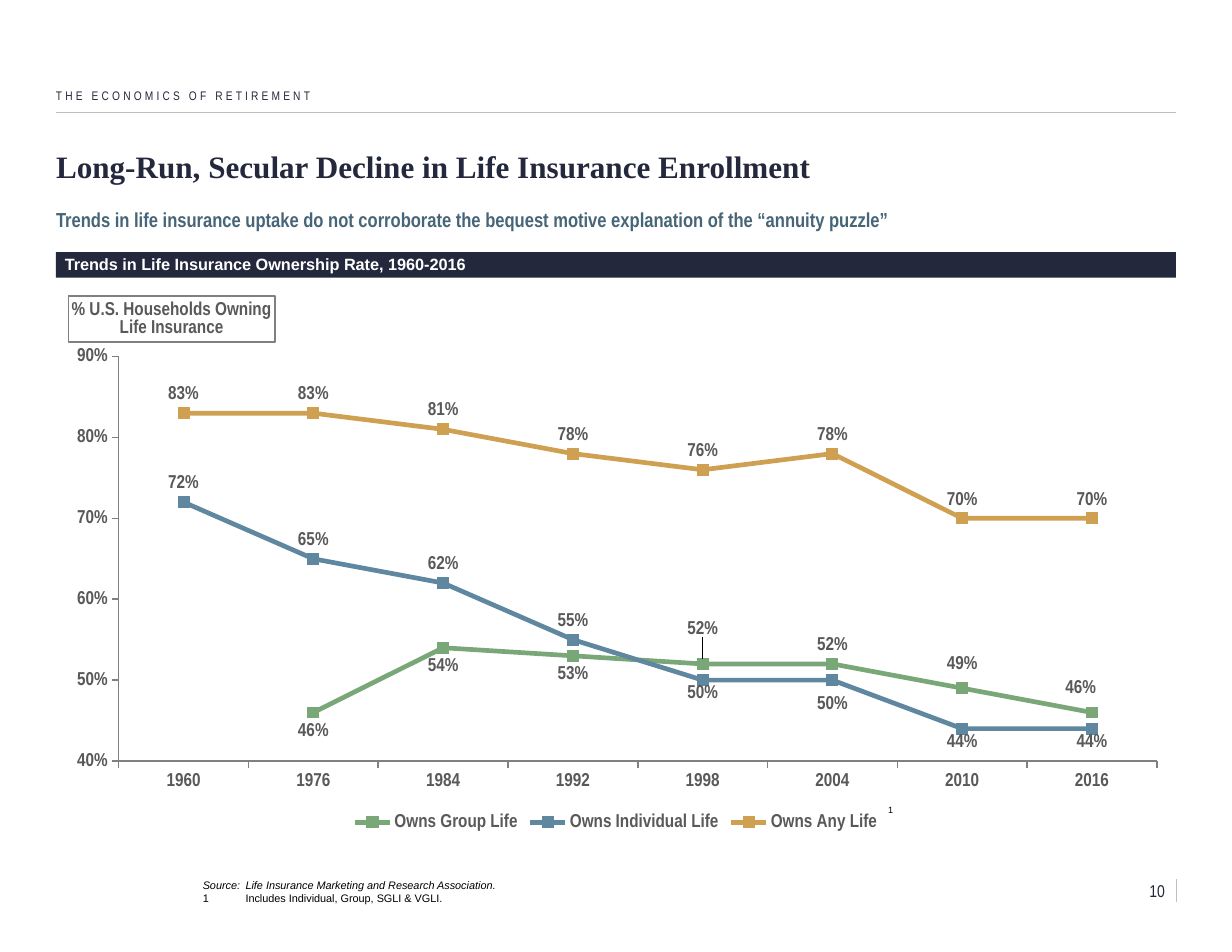
from lxml.etree import SubElement
from pptx import Presentation
from pptx.chart.data import CategoryChartData
from pptx.dml.color import RGBColor
from pptx.enum.chart import XL_CHART_TYPE, XL_LABEL_POSITION, XL_LEGEND_POSITION, XL_MARKER_STYLE, XL_TICK_MARK
from pptx.enum.shapes import MSO_CONNECTOR, MSO_SHAPE
from pptx.enum.text import MSO_ANCHOR, MSO_AUTO_SIZE, PP_ALIGN
from pptx.oxml.ns import qn
from pptx.util import Cm, Pt

NAVY = RGBColor(0x23, 0x28, 0x3C)
STEEL = RGBColor(0x47, 0x65, 0x78)
WHITE = RGBColor(0xFF, 0xFF, 0xFF)
BLACK = RGBColor(0, 0, 0)
PALE = RGBColor(0xBF, 0xBF, 0xBF)
GRAY = RGBColor(0x80, 0x80, 0x80)
DARK = RGBColor(0x59, 0x59, 0x59)
GREEN = RGBColor(0x7A, 0xA7, 0x78)
BLUE = RGBColor(0x5F, 0x87, 0xA0)
GOLD = RGBColor(0xCF, 0xA0, 0x52)

ABOVE, BELOW = XL_LABEL_POSITION.ABOVE, XL_LABEL_POSITION.BELOW
YEARS = ["1960", "1976", "1984", "1992", "1998", "2004", "2010", "2016"]
SERIES = [
    ("Owns Group Life", GREEN, BELOW, [None, 0.46, 0.54, 0.53, 0.52, 0.52, 0.49, 0.46]),
    ("Owns Individual Life", BLUE, ABOVE, [0.72, 0.65, 0.62, 0.55, 0.5, 0.5, 0.44, 0.44]),
    ("Owns Any Life", GOLD, ABOVE, [0.83, 0.83, 0.81, 0.78, 0.76, 0.78, 0.7, 0.7]),
]
SHIFTS = {
    "Owns Group Life": (ABOVE, {4: (0, -0.03), 5: (0, 0), 6: (0, -0.01), 7: (-0.01, -0.01)}),
    "Owns Individual Life": (BELOW, {4: (0, -0.01), 5: (0, 0.01), 6: (0, -0.01), 7: (0, -0.01)}),
}


def apply(item, values):
    for key, value in values.items():
        if key == "color":
            item.color.rgb = value
        else:
            setattr(item, key, value)


def style(name, size, color, **more):
    return {"name": name, "size": Pt(size), "color": color, **more}


def place(node, index, **values):
    for old in node.findall(qn("c:layout")):
        node.remove(old)
    layout = node.makeelement(qn("c:layout"))
    node.insert(index, layout)
    manual = SubElement(layout, qn("c:manualLayout"))
    for key, value in values.items():
        SubElement(manual, qn("c:" + key)).set("val", str(value))


class Page:
    narrow, sans, serif = "Arial Narrow", "Arial", "Times New Roman"

    def __init__(self, slide):
        self.slide = slide
        self.shapes = slide.shapes

    def rule(self, x1, y1, x2, y2):
        line = self.shapes.add_connector(MSO_CONNECTOR.STRAIGHT, Cm(x1), Cm(y1), Cm(x2), Cm(y2))
        apply(line.line, {"color": PALE, "width": Pt(0.5)})
        SubElement(line._element.spPr, qn("a:effectLst"))

    def letter(self, shape, lines, font, pad=(0, 0, 0, 0), anchor=MSO_ANCHOR.TOP,
               wrap=True, align=PP_ALIGN.LEFT, space=1.0):
        sides = ("margin_left", "margin_top", "margin_right", "margin_bottom")
        frame = shape.text_frame
        apply(frame, {"word_wrap": wrap, "auto_size": MSO_AUTO_SIZE.NONE, "vertical_anchor": anchor,
                      **dict(zip(sides, map(Cm, pad)))})
        for index, line in enumerate(lines):
            para = frame.add_paragraph() if index else frame.paragraphs[0]
            apply(para, {"alignment": align, "line_spacing": space, "space_before": Pt(0)})
            for text, more in line:
                run = para.add_run()
                run.text = text
                apply(run.font, {**font, **more})
        return frame

    def holder(self, index, box, text, font, **more):
        shape = self.slide.placeholders[index]
        apply(shape, dict(zip(("left", "top", "width", "height"), map(Cm, box))))
        return self.letter(shape, [[(text, {})]], font, **more)

    def label(self, box, lines, font, **more):
        shape = self.shapes.add_textbox(*map(Cm, box))
        return self.letter(shape, lines, font, **more)

    def banner(self, box, text, font):
        shape = self.shapes.add_shape(MSO_SHAPE.RECTANGLE, *map(Cm, box))
        shape.shadow.inherit = False
        shape.fill.solid()
        shape.fill.fore_color.rgb = NAVY
        shape.line.fill.background()
        self.letter(shape, [[(text, {})]], font, pad=(0.2, 0.1, 0.2, 0.1), anchor=MSO_ANCHOR.BOTTOM)

    def chart(self, box):
        data = CategoryChartData(number_format="0%")
        data.categories = YEARS
        for name, _, _, values in SERIES:
            data.add_series(name, values)
        chart = self.shapes.add_chart(XL_CHART_TYPE.LINE_MARKERS, *map(Cm, box), data).chart
        font = style(self.narrow, 12, DARK, bold=True)
        chart.has_title = False
        apply(chart.font, font)
        chart.has_legend = True
        apply(chart.legend, {"position": XL_LEGEND_POSITION.BOTTOM, "include_in_layout": False})
        area = chart._chartSpace.chart.plotArea
        place(area, 0, layoutTarget="inner", xMode="edge", yMode="edge", x=0.056, y=0.131, w=0.927, h=0.734)
        chart.plots[0].vary_by_categories = False
        for series, (_, color, spot, _) in zip(chart.plots[0].series, SERIES):
            self.series(series, color, spot)
        for axis in (chart.category_axis, chart.value_axis):
            apply(axis, {"has_major_gridlines": False, "major_tick_mark": XL_TICK_MARK.OUTSIDE,
                         "minor_tick_mark": XL_TICK_MARK.NONE})
            apply(axis.format.line, {"color": GRAY, "width": Pt(1)})
        axis = chart.value_axis
        apply(axis, {"minimum_scale": 0.4, "maximum_scale": 0.9, "major_unit": 0.1})
        apply(axis.tick_labels, {"number_format": "0%", "number_format_is_linked": False})
        self.heading(axis.axis_title, font)

    def series(self, series, color, spot):
        series.smooth = False
        apply(series.format.line, {"color": color, "width": Pt(3)})
        apply(series.marker, {"style": XL_MARKER_STYLE.SQUARE, "size": 7})
        series.marker.format.fill.solid()
        series.marker.format.fill.fore_color.rgb = color
        series.marker.format.line.color.rgb = color
        apply(series.data_labels, {"show_value": True, "position": spot})
        side, shifts = SHIFTS.get(series.name, (spot, {}))
        for index, (x, y) in shifts.items():
            label = series.points[index].data_label
            label.position = side
            if x or y:
                node = series.data_labels._element.xpath(f"c:dLbl[c:idx/@val={index}]")[0]
                place(node, 1, x=x, y=y)

    def heading(self, title, font):
        frame = title.text_frame
        for index, text in enumerate(("% U.S. Households Owning", "Life Insurance")):
            para = frame.add_paragraph() if index else frame.paragraphs[0]
            apply(para, {"alignment": PP_ALIGN.CENTER, "line_spacing": 0.9})
            run = para.add_run()
            run.text = text
            apply(run.font, font)
        apply(title.format.line, {"color": GRAY, "width": Pt(1)})
        for key, value in {"rot": "0", "vert": "horz"}.items():
            title._element.xpath(".//a:bodyPr")[0].set(key, value)
        place(title._element, 1, xMode="edge", yMode="edge", x=0.011, y=0.021)


def main():
    deck = Presentation()
    apply(deck, {"slide_width": Cm(27.94), "slide_height": Cm(21.59)})
    page = Page(deck.slides.add_slide(deck.slide_layouts[1]))
    left, wide = 1.27, 25.4
    right = left + wide

    page.rule(right, 19.94, right, 20.45)
    page.rule(left, 2.54, right, 2.54)
    page.holder(0, (left, 3.43, wide, 1.02), "Long-Run, Secular Decline in Life Insurance Enrollment",
                style(page.serif, 20, NAVY, bold=True), pad=(0, 0, 0, 0.25), space=0.9)
    frame = page.label((left, 1.91, 21.34, 0.51), [[("THE ECONOMICS OF RETIREMENT", {})]],
                       style(page.narrow, 8, NAVY), pad=(0, 0, 9.14, 0.08), anchor=MSO_ANCHOR.BOTTOM)
    frame.paragraphs[0].runs[0].font._element.set("spc", "200")
    page.chart((left, 6.45, wide, 12.5))
    page.banner((left, 5.72, wide, 0.58), "Trends in Life Insurance Ownership Rate, 1960-2016",
                style(page.sans, 10.5, WHITE, bold=True))

    notes = [[("Source: \tLife Insurance Marketing and Research Association", {"italic": True}), (".", {})],
             [("1\tIncludes Individual, Group, SGLI & VGLI.", {})]]
    frame = page.label((4.6, 20.09, 20.42, 0.43), notes, style(page.sans, 7, BLACK), anchor=MSO_ANCHOR.BOTTOM)
    hang = Cm(0.97)
    for para in frame.paragraphs:
        props = para._p.get_or_add_pPr()
        for key, value in {"marL": hang, "indent": -hang}.items():
            props.set(key, str(int(value)))
        tabs = SubElement(props, qn("a:tabLst"))
        SubElement(tabs, qn("a:tab"), pos=str(int(hang)), algn="l")

    frame = page.label((19.89, 18.08, 0.64, 0.53), [[("1", {})]], style(page.sans, 10, BLACK),
                       pad=(0.25, 0.13, 0.25, 0.13), wrap=False)
    frame.paragraphs[0].runs[0].font._element.set("baseline", "30000")
    frame = page.holder(1, (left, 4.5, wide, 0.76),
                        "Trends in life insurance uptake do not corroborate the bequest motive "
                        "explanation of the “annuity puzzle”",
                        style(page.narrow, 13, STEEL, bold=True), pad=(0, 0.2, 0, 0))
    props = frame.paragraphs[0]._p.get_or_add_pPr()
    for key in ("marL", "indent"):
        props.set(key, "0")
    SubElement(props, qn("a:buNone"))
    page.label((24.89, 19.94, 1.78, 0.51), [[("10", {})]], style(page.narrow, 11, NAVY),
               pad=(0, 0, 0.25, 0), anchor=MSO_ANCHOR.MIDDLE, wrap=False, align=PP_ALIGN.RIGHT)
    deck.save("out.pptx")


if __name__ == "__main__":
    main()
